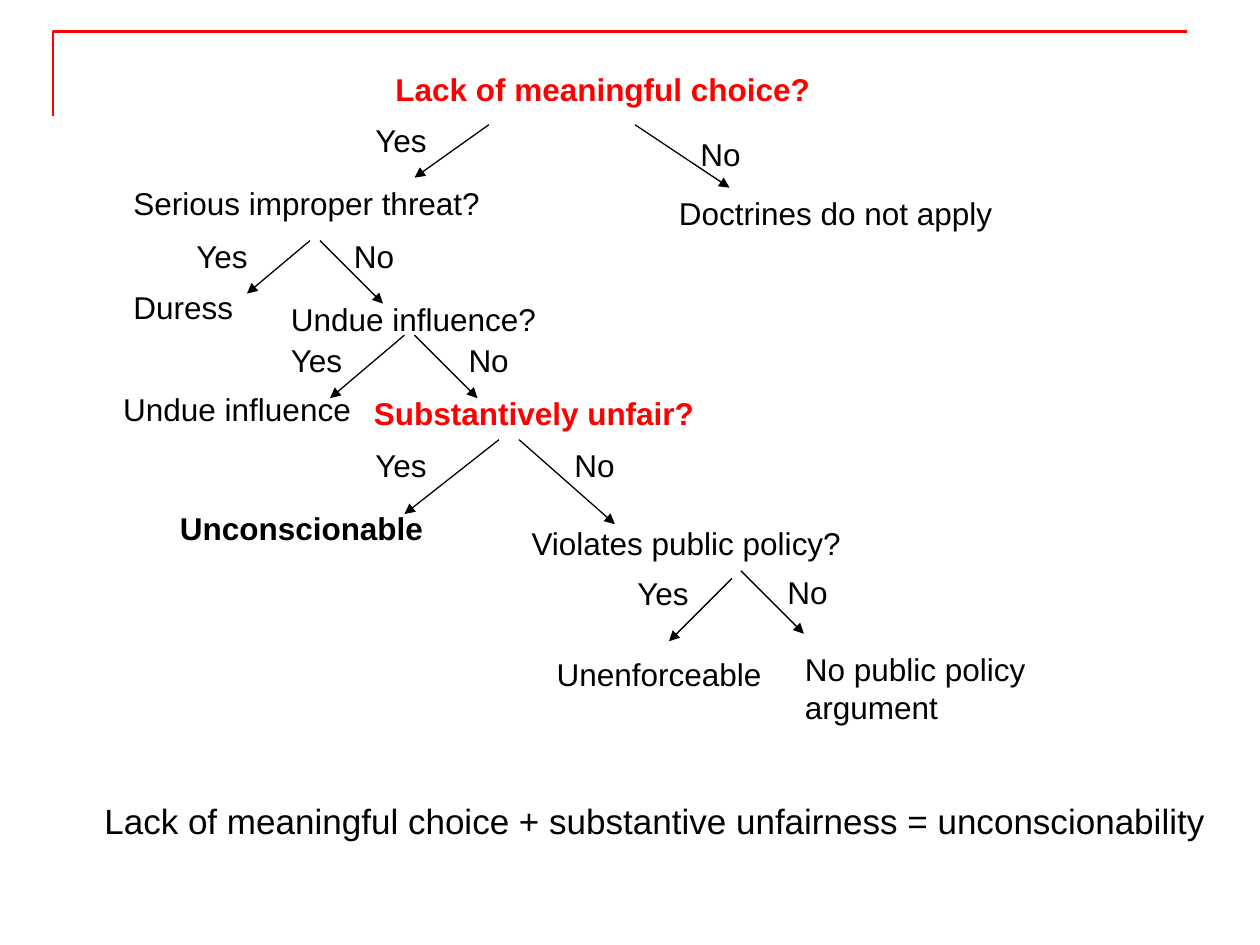
from lxml import etree
from pptx import Presentation
from pptx.dml.color import RGBColor
from pptx.enum import shapes, text
from pptx.oxml.ns import qn
from pptx.util import Inches, Pt

RED = RGBColor(0xFF, 0x00, 0x00)
BLACK = RGBColor(0x00, 0x00, 0x00)
FONT = "Arial"
LABEL_HEIGHT = 0.4

CORNER_RULE = [(0.42, 0.92), (0.42, 0.25), (9.42, 0.25)]

# text, left, top, width, height, colour, bold
NODES = [
    ("Lack of meaningful choice?", 3.04, 0.51, 3.83, 0.4, RED, True),
    ("Serious improper threat?", 0.96, 1.41, 3.17, 0.4, BLACK, False),
    ("Doctrines do not apply", 5.29, 1.49, 4.92, 0.4, BLACK, False),
    ("Duress", 0.96, 2.24, 1.25, 0.4, BLACK, False),
    ("Undue influence?", 2.21, 2.33, 2.33, 0.4, BLACK, False),
    ("Undue influence", 0.88, 3.05, 2.17, 0.4, BLACK, False),
    ("Substantively unfair?", 2.87, 3.08, 3, 0.4, RED, True),
    ("Unconscionable", 1.33, 3.99, 2.46, 0.4, BLACK, True),
    ("Violates public policy?", 4.12, 4.11, 3.25, 0.4, BLACK, False),
    ("Unenforceable", 4.32, 5.15, 1.83, 0.4, BLACK, False),
    ("No public policy argument", 6.29, 5.11, 2.83, 0.71, BLACK, False),
]

# answer, label position, arrow start, arrow end
BRANCHES = [
    ("Yes", (2.88, 0.91), (3.88, 0.99), (3.29, 1.41)),
    ("No", (5.46, 1.02), (5.04, 0.99), (5.79, 1.49)),
    ("Yes", (1.46, 1.83), (2.46, 1.91), (1.96, 2.33)),
    ("No", (2.71, 1.83), (2.54, 1.91), (3.04, 2.41)),
    ("Yes", (2.21, 2.66), (3.21, 2.66), (2.62, 3.16)),
    ("No", (3.62, 2.66), (3.29, 2.66), (3.79, 3.16)),
    ("Yes", (2.88, 3.49), (3.96, 3.49), (3.21, 4.08)),
    ("No", (4.46, 3.49), (4.12, 3.49), (4.88, 4.16)),
    ("Yes", (4.96, 4.51), (5.81, 4.59), (5.31, 5.09)),
    ("No", (6.15, 4.5), (5.88, 4.53), (6.38, 5.03)),
]
ANSWER_WIDTHS = {"Yes": 0.92, "No": 0.58}

SUMMARY = "Lack of meaningful choice + substantive unfairness = unconscionability"


def add_label(slide, words, left, top, width, height=LABEL_HEIGHT,
              color=BLACK, bold=False, size=18):
    box = slide.shapes.add_textbox(*map(Inches, (left, top, width, height)))
    frame = box.text_frame
    frame.word_wrap = True
    frame.auto_size = text.MSO_AUTO_SIZE.SHAPE_TO_FIT_TEXT
    run = frame.paragraphs[0].add_run()
    run.text = words
    run.font.name = FONT
    run.font.size = Pt(size)
    run.font.bold = bold
    run.font.color.rgb = color


def add_arrow(slide, start, end):
    arrow = slide.shapes.add_connector(
        shapes.MSO_CONNECTOR.STRAIGHT, *map(Inches, start + end))
    arrow.line.color.rgb = BLACK
    arrow.line.width = Pt(0.75)
    etree.SubElement(arrow.line._get_or_add_ln(), qn("a:tailEnd"), type="triangle")
    etree.SubElement(arrow._element.spPr, qn("a:effectLst"))


def add_corner_rule(slide):
    builder = slide.shapes.build_freeform(
        *map(Inches, CORNER_RULE[0]), scale=1.0)
    builder.add_line_segments(
        [(Inches(x), Inches(y)) for x, y in CORNER_RULE[1:]], close=False)
    rule = builder.convert_to_shape()
    rule.shadow.inherit = False
    rule.fill.background()
    rule.line.color.rgb = RED
    rule.line.width = Pt(1.5)


def main():
    presentation = Presentation()
    presentation.slide_width = Inches(10)
    presentation.slide_height = Inches(7.5)
    slide = presentation.slides.add_slide(
        presentation.slide_layouts.get_by_name("Blank"))

    add_corner_rule(slide)
    for node in NODES:
        add_label(slide, *node)
    for answer, position, start, end in BRANCHES:
        add_arrow(slide, start, end)
        add_label(slide, answer, *position, ANSWER_WIDTHS[answer])
    add_label(slide, SUMMARY, 0.73, 6.3, 8.94, 0.44, size=20)

    presentation.save("out.pptx")


if __name__ == "__main__":
    main()
